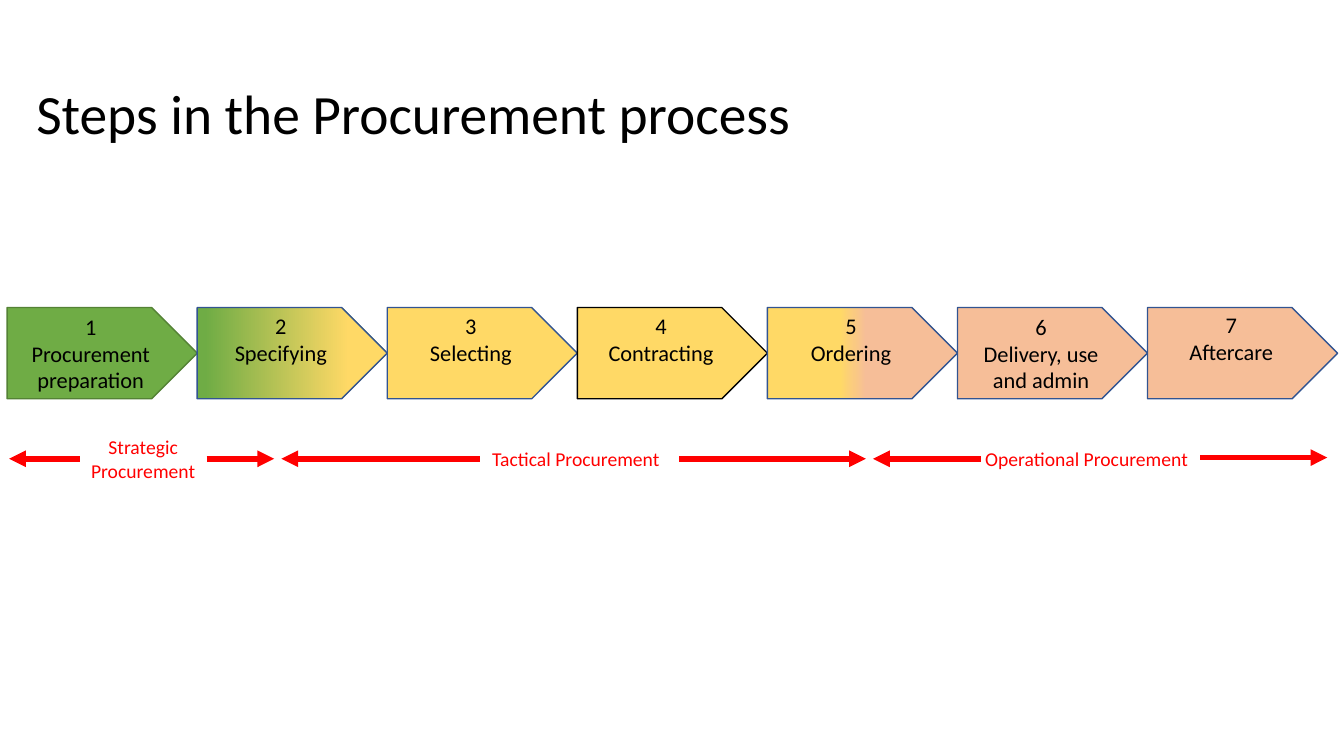
from dataclasses import dataclass
from typing import Optional

from lxml.etree import SubElement
from pptx import Presentation
from pptx.dml.color import RGBColor
from pptx.enum.shapes import MSO_CONNECTOR, MSO_SHAPE
from pptx.enum.text import MSO_ANCHOR, MSO_AUTO_SIZE, PP_ALIGN
from pptx.oxml.ns import qn
from pptx.slide import Slide
from pptx.text.text import TextFrame
from pptx.util import Cm, Pt


@dataclass(frozen=True)
class Theme:
    font: str = "Calibri"
    ink: str = "000000"
    green: str = "6FAC45"
    dark_green: str = "548235"
    yellow: str = "FFD966"
    peach: str = "F6BE98"
    blue: str = "325491"
    red: str = "FF0000"
    title_size: float = 39.6
    step_size: float = 16
    phase_size: float = 14


THEME = Theme()


@dataclass(frozen=True)
class Blend:
    start: str
    end: str
    start_percent: int
    end_percent: int


@dataclass(frozen=True)
class Step:
    name: str
    fill: str | Blend
    outline: str = THEME.blue
    lift: float = 0.69  # extra bottom inset in cm, one text line


@dataclass(frozen=True)
class Phase:
    name: str
    left: float
    width: float
    left_arrow: tuple[float, float]
    right_arrow: tuple[float, float]
    right_arrow_y: float = 11.56


STEPS = [
    Step("Procurement preparation", THEME.green, THEME.dark_green, lift=0),
    Step("Specifying", Blend(THEME.green, THEME.yellow, 4, 80)),
    Step("Selecting", THEME.yellow),
    Step("Contracting", THEME.yellow, THEME.ink),
    Step("Ordering", Blend(THEME.yellow, THEME.peach, 38, 52)),
    Step("Delivery, use\nand admin", THEME.peach, lift=0),
    Step("Aftercare", THEME.peach, lift=0.77),
]
STEP_LEFT, STEP_TOP, STEP_PITCH, STEP_HEIGHT = 0.18, 7.75, 4.79, 2.3

PHASES = [
    Phase("Strategic\nProcurement", 2.01, 3.2, (2.01, 0.23), (5.21, 6.91)),
    Phase("Tactical Procurement", 12.09, 4.85, (12.09, 7.09), (17.12, 21.82)),
    Phase("Operational Procurement", 24.49, 5.79, (24.71, 22), (30.25, 33.45), 11.53),
]
PHASE_Y, PHASE_HEIGHT = 11.56, 1.45


def write_text(frame: TextFrame, text: str, *, size: float, color: str = THEME.ink,
               align: PP_ALIGN = PP_ALIGN.CENTER, wrap: bool = True,
               line_spacing: Optional[float] = None) -> None:
    frame.text = text
    frame.word_wrap = wrap
    frame.auto_size = MSO_AUTO_SIZE.NONE
    frame.vertical_anchor = MSO_ANCHOR.MIDDLE
    for paragraph in frame.paragraphs:
        paragraph.alignment = align
        paragraph.line_spacing = line_spacing
        paragraph.font.name = THEME.font
        paragraph.font.size = Pt(size)
        paragraph.font.color.rgb = RGBColor.from_string(color)


def add_title(slide: Slide, text: str) -> None:
    title = slide.shapes.title
    title.left, title.top, title.width, title.height = Cm(0.66), Cm(2.01), Cm(29.21), Cm(1.83)
    write_text(title.text_frame, text, size=THEME.title_size, align=PP_ALIGN.LEFT,
               line_spacing=0.9)


def add_step(slide: Slide, index: int, step: Step) -> None:
    shape = slide.shapes.add_shape(
        MSO_SHAPE.PENTAGON, Cm(STEP_LEFT + index * STEP_PITCH), Cm(STEP_TOP),
        Cm(STEP_PITCH), Cm(STEP_HEIGHT))
    shape.shadow.inherit = False
    if isinstance(step.fill, Blend):
        blend = step.fill
        shape.fill.gradient()
        shape.fill.gradient_angle = 0
        ends = [(blend.start, blend.start_percent), (blend.end, blend.end_percent)]
        for stop, (color, percent) in zip(shape.fill.gradient_stops, ends):
            stop.color.rgb = RGBColor.from_string(color)
            stop.position = percent / 100
    else:
        shape.fill.solid()
        shape.fill.fore_color.rgb = RGBColor.from_string(step.fill)
    shape.line.color.rgb = RGBColor.from_string(step.outline)
    shape.line.width = Pt(1)
    write_text(shape.text_frame, f"{index + 1}\n{step.name}", size=THEME.step_size)
    shape.text_frame.margin_bottom = Cm(0.13 + step.lift)


def add_arrow(slide: Slide, start: float, end: float, y: float) -> None:
    arrow = slide.shapes.add_connector(
        MSO_CONNECTOR.STRAIGHT, Cm(start), Cm(y), Cm(end), Cm(y))
    arrow.line.color.rgb = RGBColor.from_string(THEME.red)
    arrow.line.width = Pt(4)
    SubElement(arrow.line._get_or_add_ln(), qn("a:tailEnd"), type="triangle")
    SubElement(arrow._element.spPr, qn("a:effectLst"))


def add_phase(slide: Slide, phase: Phase) -> None:
    add_arrow(slide, *phase.left_arrow, PHASE_Y)
    add_arrow(slide, *phase.right_arrow, phase.right_arrow_y)
    label = slide.shapes.add_textbox(
        Cm(phase.left), Cm(PHASE_Y - PHASE_HEIGHT / 2), Cm(phase.width), Cm(PHASE_HEIGHT))
    write_text(label.text_frame, phase.name, size=THEME.phase_size, color=THEME.red,
               wrap=False)


def main() -> None:
    presentation = Presentation()
    presentation.slide_width, presentation.slide_height = Cm(33.87), Cm(19.05)
    slide = presentation.slides.add_slide(presentation.slide_layouts[5])

    add_title(slide, "Steps in the Procurement process")

    # Chain of process steps
    for index, step in enumerate(STEPS):
        add_step(slide, index, step)

    # Phases spanning the steps
    for phase in PHASES:
        add_phase(slide, phase)

    presentation.save("out.pptx")


if __name__ == "__main__":
    main()
